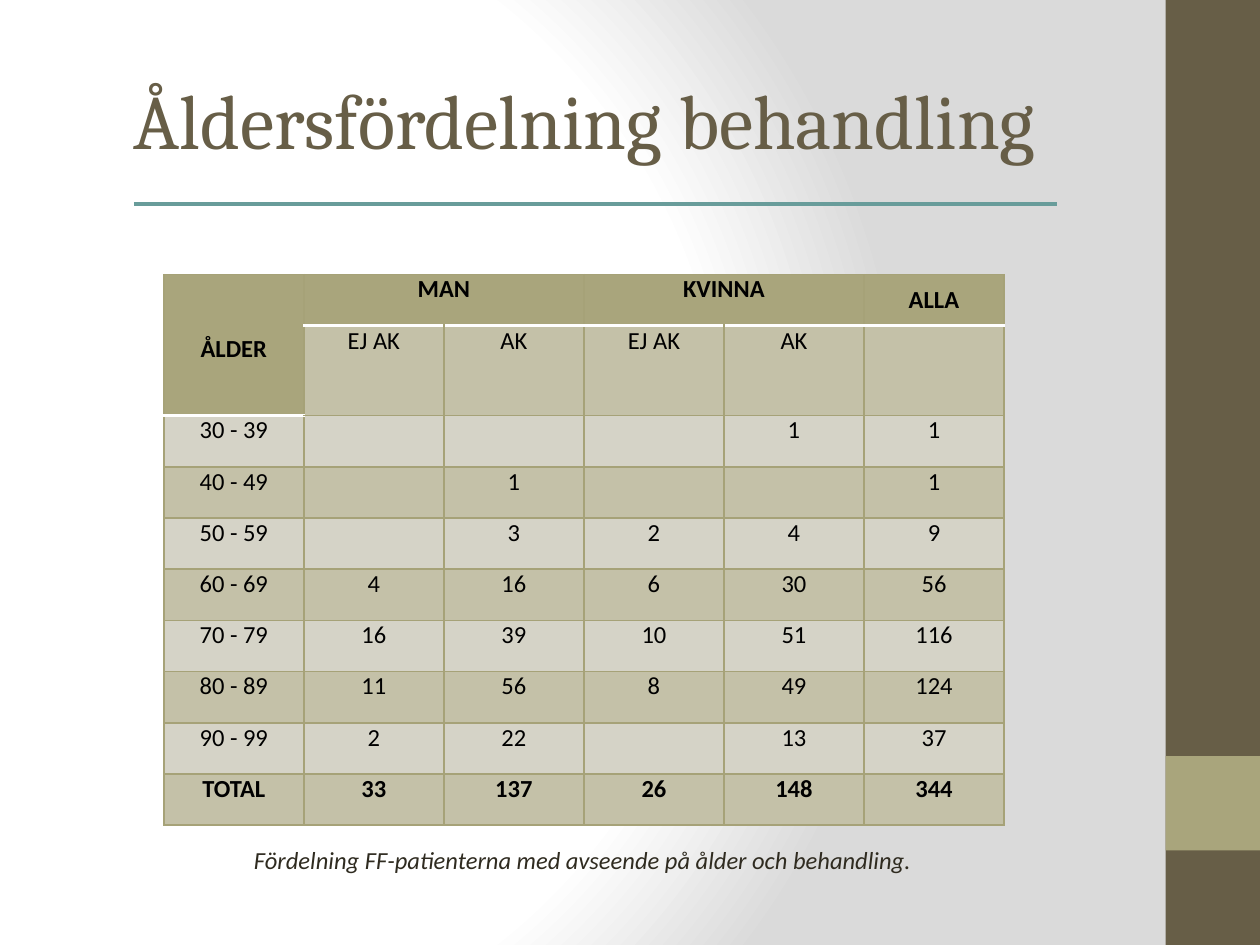
from dataclasses import dataclass

from pptx import Presentation
from pptx.dml.color import RGBColor
from pptx.enum.shapes import MSO_CONNECTOR, MSO_SHAPE
from pptx.enum.text import MSO_ANCHOR, PP_ALIGN
from pptx.oxml import parse_xml
from pptx.oxml.ns import nsdecls
from pptx.util import Inches, Pt

RECT = MSO_SHAPE.RECTANGLE
LINE = MSO_CONNECTOR.STRAIGHT
CENTER = PP_ALIGN.CENTER
TOP, MIDDLE = MSO_ANCHOR.TOP, MSO_ANCHOR.MIDDLE


@dataclass(frozen=True)
class Theme:
    dark: str = "675E47"
    olive: str = "A9A57C"
    band: str = "C4C1A8"
    pale: str = "D5D3C7"
    edge: str = "A6A278"
    white: str = "FFFFFF"
    gray: str = "DADADA"
    black: str = "000000"
    ink: str = "2F2B20"
    teal: str = "689C9A"
    head: str = "Cambria"
    body: str = "Calibri"
    big: int = 44
    small: int = 14


THEME = Theme()
WIDE, HIGH = 10, 7.5
SIDE = 0.75

ROWS = [
    ["ÅLDER", "MAN", "", "KVINNA", "", "ALLA"],
    ["", "EJ AK", "AK", "EJ AK", "AK", ""],
    ["30 - 39", "", "", "", "1", "1"],
    ["40 - 49", "", "1", "", "", "1"],
    ["50 - 59", "", "3", "2", "4", "9"],
    ["60 - 69", "4", "16", "6", "30", "56"],
    ["70 - 79", "16", "39", "10", "51", "116"],
    ["80 - 89", "11", "56", "8", "49", "124"],
    ["90 - 99", "2", "22", "", "13", "37"],
    ["TOTAL", "33", "137", "26", "148", "344"],
]
MERGES = [((0, 0), (1, 0)), ((0, 1), (0, 2)), ((0, 3), (0, 4))]


def color(code):
    return RGBColor.from_string(code)


def write(frame, text, face, size, tint, bold=False, italic=False):
    frame.text = text
    para = frame.paragraphs[0]
    para.alignment = CENTER
    for run in para.runs:
        font = run.font
        font.name, font.size = face, Pt(size)
        font.bold, font.italic = bold, italic
        font.color.rgb = color(tint)


def add_text(slide, box, text, face, size, tint, italic=False):
    frame = slide.shapes.add_textbox(*map(Inches, box)).text_frame
    frame.word_wrap = True
    write(frame, text, face, size, tint, italic=italic)


def paint_back(slide):
    """Give the slide a circular gradient that is lit from the left."""
    stops = [(0, THEME.white), (75, THEME.white), (100, THEME.gray)]
    marks = "".join(
        f'<a:gs pos="{pos * 1000}"><a:srgbClr val="{tint}"/></a:gs>'
        for pos, tint in stops)
    slide.element.cSld.insert(0, parse_xml(
        f'<p:bg {nsdecls("p", "a")}><p:bgPr><a:gradFill rotWithShape="1">'
        f'<a:gsLst>{marks}</a:gsLst><a:path path="circle">'
        '<a:fillToRect l="20000" t="50000" r="100000" b="50000"/></a:path>'
        '</a:gradFill><a:effectLst/></p:bgPr></p:bg>'))


def add_side(slide, box):
    left, top, width, height = box
    block = (left, top + 0.8 * height, width, 0.1 * height)
    for area, tint in ((box, THEME.dark), (block, THEME.olive)):
        bar = slide.shapes.add_shape(RECT, *map(Inches, area))
        bar.shadow.inherit = False
        bar.fill.solid()
        bar.fill.fore_color.rgb = color(tint)
        bar.line.fill.background()


def add_title(slide, box):
    left, top, width, height = box
    add_text(slide, box, "Åldersfördelning behandling",
             THEME.head, THEME.big, THEME.dark)
    y = top + 0.87 * height
    ends = (left + 0.068 * width, y, left + 0.953 * width, y)
    rule = slide.shapes.add_connector(LINE, *map(Inches, ends))
    rule.line.color.rgb = color(THEME.teal)
    rule.line.width = Pt(2)
    rule._element.spPr.append(parse_xml(f'<a:effectLst {nsdecls("a")}/>'))


def add_edges(cell, above, below):
    """Draw the cell's borders; a true flag makes that side a white rule."""
    props = cell._tc.get_or_add_tcPr()
    for spot, (side, rule) in enumerate(
            (("L", False), ("R", False), ("T", above), ("B", below))):
        tint, size = (THEME.white, 2) if rule else (THEME.edge, 1)
        props.insert(spot, parse_xml(
            f'<a:ln{side} {nsdecls("a")} w="{Pt(size)}"><a:solidFill>'
            f'<a:srgbClr val="{tint}"/></a:solidFill></a:ln{side}>'))


def add_ages(slide, box):
    """Place the table; the second row is taller than the equal others."""
    left, top, width, height = box
    count, span = len(ROWS), len(ROWS[0])
    step = 0.093 * height
    shape = slide.shapes.add_table(count, span, *map(Inches, box))
    table = shape.table
    table.horz_banding = False
    for col in table.columns:
        col.width = Inches(width / span)
    for row in table.rows:
        row.height = Inches(step)
    table.rows[1].height = Inches(height - (count - 1) * step)

    for r, line in enumerate(ROWS):
        for c, text in enumerate(line):
            cell = table.cell(r, c)
            head = r == 0 or (r == 1 and c == 0)
            last = 1 if c == 0 else 0
            tint = THEME.band if r % 2 else THEME.pale
            cell.fill.solid()
            cell.fill.fore_color.rgb = color(THEME.olive if head else tint)
            add_edges(cell, r == last + 1, r == last)
            cell.margin_left = cell.margin_right = Inches(0.07)
            cell.margin_top = cell.margin_bottom = 0
            cell.vertical_anchor = MIDDLE if text == "ALLA" else TOP
            write(cell.text_frame, text, THEME.body, THEME.small, THEME.black,
                  bold=head or r == count - 1)
    table.cell(0, 0).margin_top = Inches(0.47)
    for first, last in MERGES:
        table.cell(*first).merge(table.cell(*last))


def add_note(slide, box):
    add_text(slide, box,
             "Fördelning FF-patienterna med avseende på ålder och behandling.",
             THEME.body, THEME.small, THEME.ink, italic=True)


def main():
    deck = Presentation()
    deck.slide_width, deck.slide_height = Inches(WIDE), Inches(HIGH)
    slide = deck.slides.add_slide(deck.slide_layouts[6])
    main_width = WIDE - SIDE
    paint_back(slide)
    add_side(slide, (main_width, 0, SIDE, HIGH))
    add_ages(slide, (1.3, 2.18, 6.67, 4.37))
    add_note(slide, (0, 6.66, main_width, 0.34))
    add_title(slide, (0.5, 0.53, 8.28, 1.25))
    deck.save("out.pptx")


if __name__ == "__main__":
    main()
